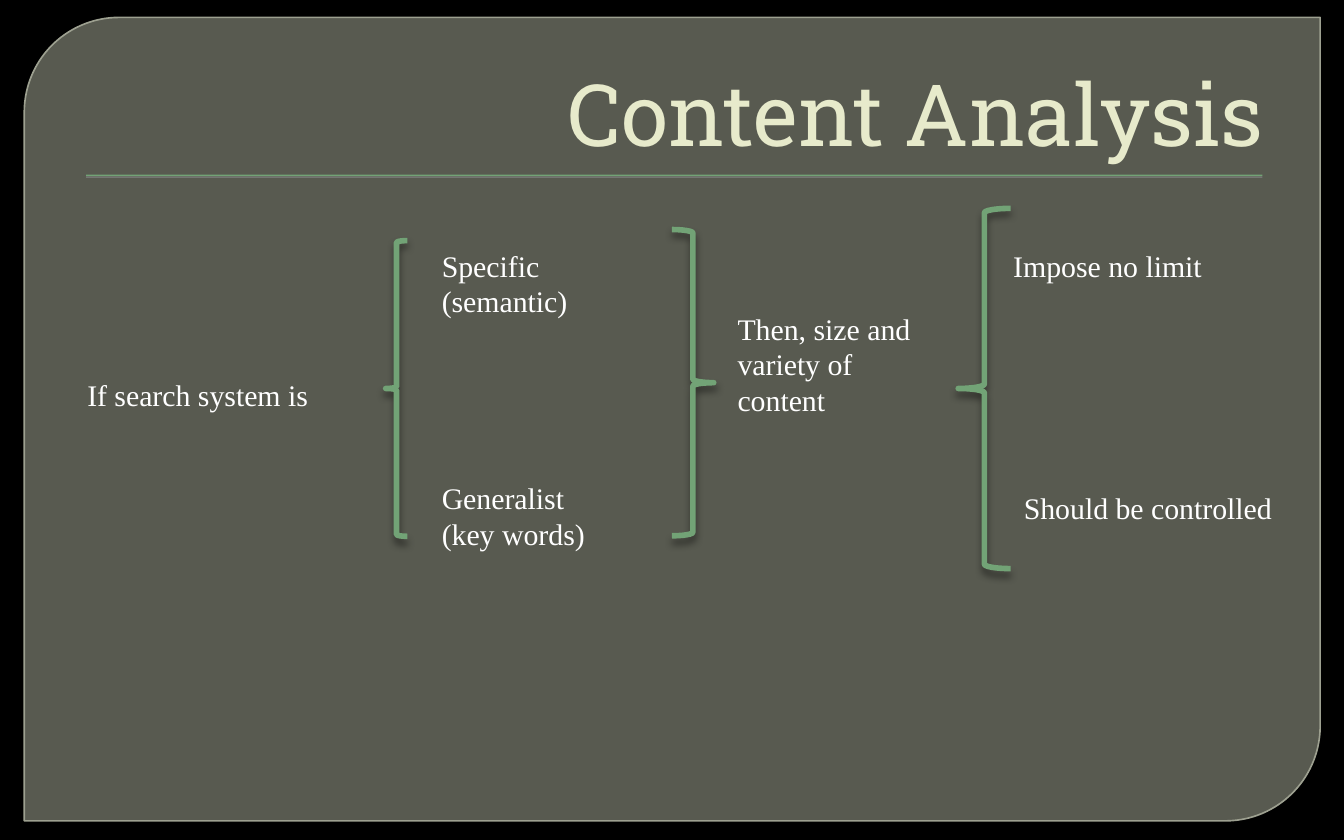
from dataclasses import dataclass

from lxml.etree import SubElement
from pptx import Presentation
from pptx.dml.color import RGBColor
from pptx.enum.shapes import MSO_SHAPE
from pptx.enum.text import MSO_ANCHOR, MSO_AUTO_SIZE, PP_ALIGN
from pptx.oxml.ns import qn
from pptx.util import Cm, Pt


@dataclass(frozen=True)
class Theme:
    """Colours, fonts and type sizes of the slide."""
    back: str = "000000"
    panel: str = "585A50"
    edge: str = "9DA090"
    green: str = "72A376"
    cream: str = "E7EACB"
    white: str = "FFFFFF"
    grey: str = "808080"
    head: str = "Roboto Slab"
    text: str = "Times New Roman"
    big: int = 46
    small: int = 16


def apply(target, values):
    """Set each named value on the target."""
    for name, value in values.items():
        setattr(target, name, value)


class Deck:
    """Holds the theme and the current slide."""

    def __init__(self, theme):
        """Start a deck with one blank titled slide."""
        self.theme = theme
        self.show = Presentation()
        apply(self.show, {"slide_width": Cm(25.4), "slide_height": Cm(15.88)})
        self.slide = self.show.slides.add_slide(self.show.slide_layouts[5])
        self.paint(self.slide.background.fill, theme.back)

    def paint(self, fill, color):
        """Fill with one solid colour."""
        fill.solid()
        fill.fore_color.rgb = RGBColor.from_string(color)

    def shape(self, kind, box, fill=None, line=None, width=1):
        """Add a preset shape with a flat fill and outline."""
        item = self.slide.shapes.add_shape(kind, *map(Cm, box))
        item.shadow.inherit = False
        for part, color in ((item.fill, fill), (item.line.fill, line)):
            if color:
                self.paint(part, color)
            else:
                part.background()
        if line:
            item.line.width = Pt(width)
        return item

    def shade(self, item, color, alpha, blur, dist):
        """Cast a shadow straight down."""
        effects = item._element.spPr.find(qn("a:effectLst"))
        outer = SubElement(effects, qn("a:outerShdw"), blurRad=str(Pt(blur)),
                           dist=str(Pt(dist)), dir="5400000", rotWithShape="0")
        tint = SubElement(outer, qn("a:srgbClr"), val=color)
        SubElement(tint, qn("a:alpha"), val=str(alpha * 1000))

    def panel(self, box):
        """Add the panel with two round corners."""
        item = self.shape(MSO_SHAPE.ROUND_2_DIAG_RECTANGLE, box,
                          self.theme.panel, self.theme.edge, 0.87)
        item.adjustments[0] = 0.118

    def rule(self, box):
        """Add the thin rule below the title."""
        item = self.shape(MSO_SHAPE.RECTANGLE, box, self.theme.green)
        self.shade(item, self.theme.grey, 75, 0, 1)

    def brace(self, kind, box):
        """Add a brace with a soft shadow."""
        item = self.shape(kind, box, line=self.theme.green, width=3)
        self.shade(item, self.theme.back, 43, 4, 3)

    def style(self, frame, face, size, color):
        """Set the font of every paragraph."""
        for para in frame.paragraphs:
            apply(para.font, {"name": face, "size": Pt(size)})
            para.font.color.rgb = RGBColor.from_string(color)

    def title(self, words, box):
        """Fill the title and lift it above the panel."""
        item = self.slide.shapes.title
        names = ("left", "top", "width", "height")
        apply(item, dict(zip(names, map(Cm, box))))
        frame = item.text_frame
        frame.text = words
        apply(frame, {"vertical_anchor": MSO_ANCHOR.BOTTOM, "word_wrap": True,
                      "auto_size": MSO_AUTO_SIZE.NONE})
        frame.paragraphs[0].alignment = PP_ALIGN.RIGHT
        self.style(frame, self.theme.head, self.theme.big, self.theme.cream)
        self.slide.shapes._spTree.append(item._element)

    def label(self, words, box):
        """Add a wrapped text box."""
        frame = self.slide.shapes.add_textbox(*map(Cm, box)).text_frame
        frame.text = words
        apply(frame, {"word_wrap": True,
                      "auto_size": MSO_AUTO_SIZE.SHAPE_TO_FIT_TEXT})
        self.style(frame, self.theme.text, self.theme.small, self.theme.white)


BRACES = (
    (MSO_SHAPE.LEFT_BRACE, (7.29, 4.55, 0.41, 5.59)),
    (MSO_SHAPE.RIGHT_BRACE, (12.7, 4.34, 0.79, 5.79)),
    (MSO_SHAPE.LEFT_BRACE, (18.11, 3.94, 0.99, 6.81)),
)
LABELS = (
    ("If search system is", (1.4, 6.99, 5.31, 0.94)),
    ("Specific\n(semantic)", (8.1, 4.55, 3.4, 1.63)),
    ("Generalist\n(key words)", (8.1, 8.94, 3.4, 1.63)),
    ("Then, size and variety of content", (13.69, 5.74, 3.81, 2.31)),
    ("Impose no limit", (18.9, 4.55, 5.21, 0.94)),
    ("Should be controlled", (19.1, 9.14, 5.59, 0.94)),
)


def main():
    """Build and save the slide."""
    deck = Deck(Theme())
    deck.panel((0.46, 0.33, 24.49, 15.19))
    deck.rule((1.63, 3.3, 22.23, 0.03))
    deck.title("Content Analysis", (1.27, 0.58, 22.86, 2.64))
    for kind, box in BRACES:
        deck.brace(kind, box)
    for words, box in LABELS:
        deck.label(words, box)
    deck.show.save("out.pptx")


if __name__ == "__main__":
    main()
